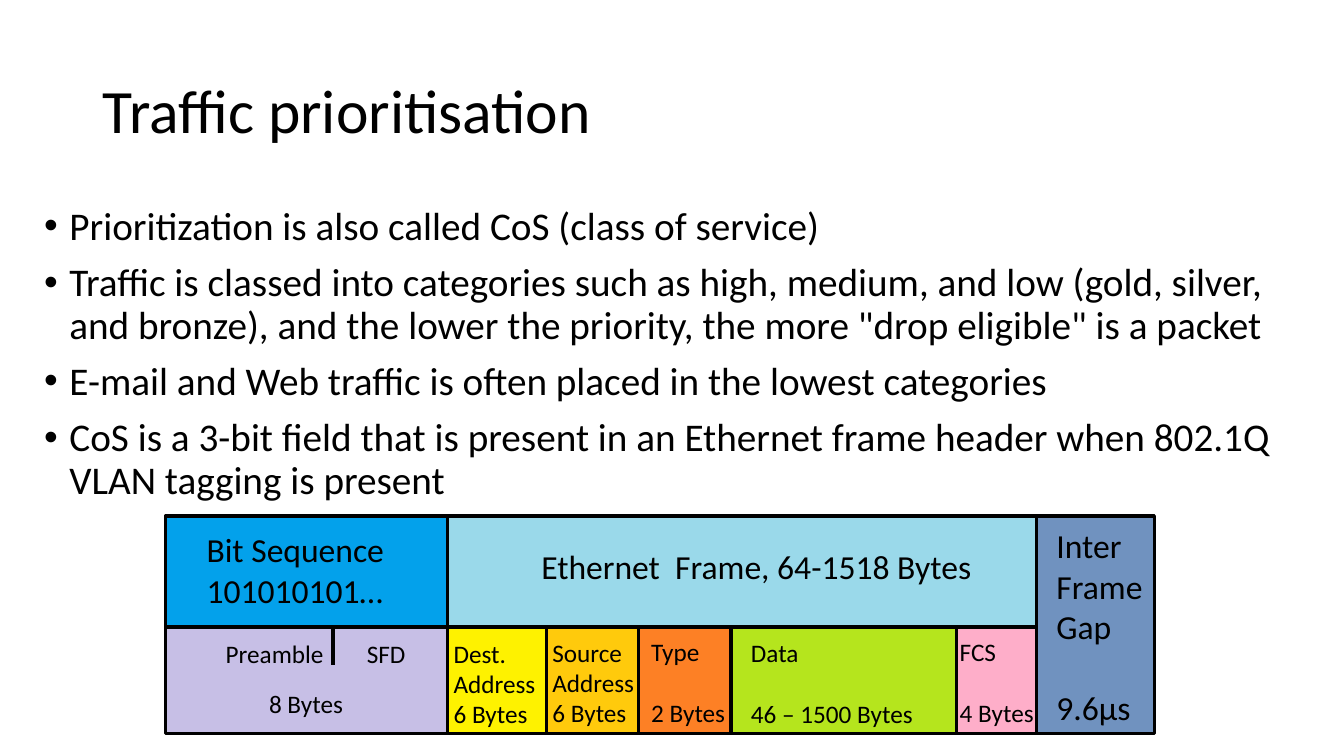
import pptx
import pptx.dml.color
import pptx.enum.shapes
import pptx.enum.text
import pptx.util
from pptx.util import Inches

FONT = "Calibri"
BLACK = "000000"
FRAME_LEFT, FRAME_TOP, FIELD_TOP, FRAME_BOTTOM = 1.64, 5.12, 6.22, 7.28
BULLETS = [
    "Prioritization is also called CoS (class of service)",
    "Traffic is classed into categories such as high, medium, and low (gold, silver, "
    'and bronze), and the lower the priority, the more "drop eligible" is a packet',
    "E-mail and Web traffic is often placed in the lowest categories",
    "CoS is a 3-bit field that is present in an Ethernet frame header when 802.1Q "
    "VLAN tagging is present",
]
SECTIONS = [
    (2.8, "03A1EB", FIELD_TOP),
    (5.84, "9AD9EA", FIELD_TOP),
    (1.17, "7092BF", FRAME_BOTTOM),
]
FIELDS = [
    (2.8, "C7BFE6"),
    (0.98, "FEF200"),
    (0.91, "FFCA0C"),
    (0.92, "FD8025"),
    (2.24, "B5E51D"),
    (0.79, "FEAEC9"),
]
LABELS = [
    (1.95, 5.2, 1.98, 0.91, 24, "Bit Sequence\n101010101…", 0),
    (5.27, 5.37, 4.51, 0.5, 24, "Ethernet  Frame, 64-1518 Bytes", 0),
    (10.38, 5.16, 1.06, 2.12, 24, "Inter\nFrame\nGap\n9.6µs", 29.3),
    (2.14, 6.28, 1.18, 0.4, 18, "Preamble", 0),
    (3.54, 6.28, 0.59, 0.4, 18, "SFD", 0),
    (2.57, 6.78, 0.94, 0.4, 18, "8 Bytes", 0),
    (4.4, 6.28, 1.02, 1.01, 18, "Dest.\nAddress\n6 Bytes", 0),
    (5.38, 6.27, 1.02, 1.01, 18, "Source\nAddress\n6 Bytes", 0),
    (6.36, 6.26, 0.94, 1.01, 18, "Type\n2 Bytes", 22),
    (7.35, 6.27, 1.82, 1.01, 18, "Data\n46 – 1500 Bytes", 22),
    (9.42, 6.26, 0.94, 1.01, 18, "FCS\n4 Bytes", 22),
]


def color(value):
    return pptx.dml.color.RGBColor.from_string(value)


def format_text(frame, size, line_spacing=1.0):
    for para in frame.paragraphs:
        para.alignment = pptx.enum.text.PP_ALIGN.LEFT
        para.line_spacing = line_spacing
        for span in para.runs:
            span.font.name = FONT
            span.font.size = pptx.util.Pt(size)
            span.font.color.rgb = color(BLACK)


def add_title(page, text):
    title = page.shapes.title
    title.left, title.top = Inches(0.92), Inches(0.4)
    title.width, title.height = Inches(11.5), Inches(1.45)
    title.text_frame.text = text
    title.text_frame.vertical_anchor = pptx.enum.text.MSO_ANCHOR.MIDDLE
    format_text(title.text_frame, 44, 0.9)


def add_text(page, left, top, width, height, text, size, wrap=False, line_spacing=1.0):
    box = page.shapes.add_textbox(Inches(left), Inches(top), Inches(width), Inches(height))
    frame = box.text_frame
    frame.word_wrap = wrap
    frame.text = text
    format_text(frame, size, line_spacing)
    return frame


def add_bullets(page, lines):
    frame = add_text(page, 0.34, 2, 12.68, 3.66, "\n".join(lines), 28, True, 0.9)
    for para in frame.paragraphs:
        para.space_before = pptx.util.Pt(10)
        properties = para._p.get_or_add_pPr()
        properties.set("marL", str(Inches(0.25)))
        properties.set("indent", str(Inches(-0.25)))
        font = properties.makeelement(pptx.oxml.ns.qn("a:buFont"), {"typeface": "Arial"})
        bullet = properties.makeelement(pptx.oxml.ns.qn("a:buChar"), {"char": "•"})
        properties.extend([font, bullet])


def add_block(page, left, top, width, bottom, fill):
    block = page.shapes.add_shape(
        pptx.enum.shapes.MSO_SHAPE.RECTANGLE,
        Inches(left), Inches(top), Inches(width), Inches(bottom - top),
    )
    block.shadow.inherit = False
    block.fill.solid()
    block.fill.fore_color.rgb = color(fill)
    block.line.color.rgb = color(BLACK)
    block.line.width = pptx.util.Pt(2.25)


def add_frame_blocks(page):
    left = FRAME_LEFT
    for width, fill, bottom in SECTIONS:
        add_block(page, left, FRAME_TOP, width, bottom, fill)
        left += width
    left = FRAME_LEFT
    for width, fill in FIELDS:
        add_block(page, left, FIELD_TOP, width, FRAME_BOTTOM, fill)
        left += width


def add_divider(page, x, top, bottom):
    divider = page.shapes.add_connector(
        pptx.enum.shapes.MSO_CONNECTOR.STRAIGHT,
        Inches(x), Inches(top), Inches(x), Inches(bottom),
    )
    divider.line.color.rgb = color(BLACK)
    divider.line.width = pptx.util.Pt(3)
    properties = divider._element.spPr
    properties.append(properties.makeelement(pptx.oxml.ns.qn("a:effectLst"), {}))


def add_labels(page):
    for left, top, width, height, size, text, last_gap in LABELS:
        frame = add_text(page, left, top, width, height, text, size)
        if last_gap:
            frame.paragraphs[-1].space_before = pptx.util.Pt(last_gap)


def main():
    deck = pptx.Presentation()
    deck.slide_width, deck.slide_height = Inches(13.33), Inches(7.5)
    page = deck.slides.add_slide(deck.slide_layouts.get_by_name("Title Only"))
    add_title(page, "Traffic prioritisation")
    add_bullets(page, BULLETS)
    add_frame_blocks(page)
    add_divider(page, 3.3, 6.21, 6.6)
    add_labels(page)
    deck.save("out.pptx")


if __name__ == "__main__":
    main()
